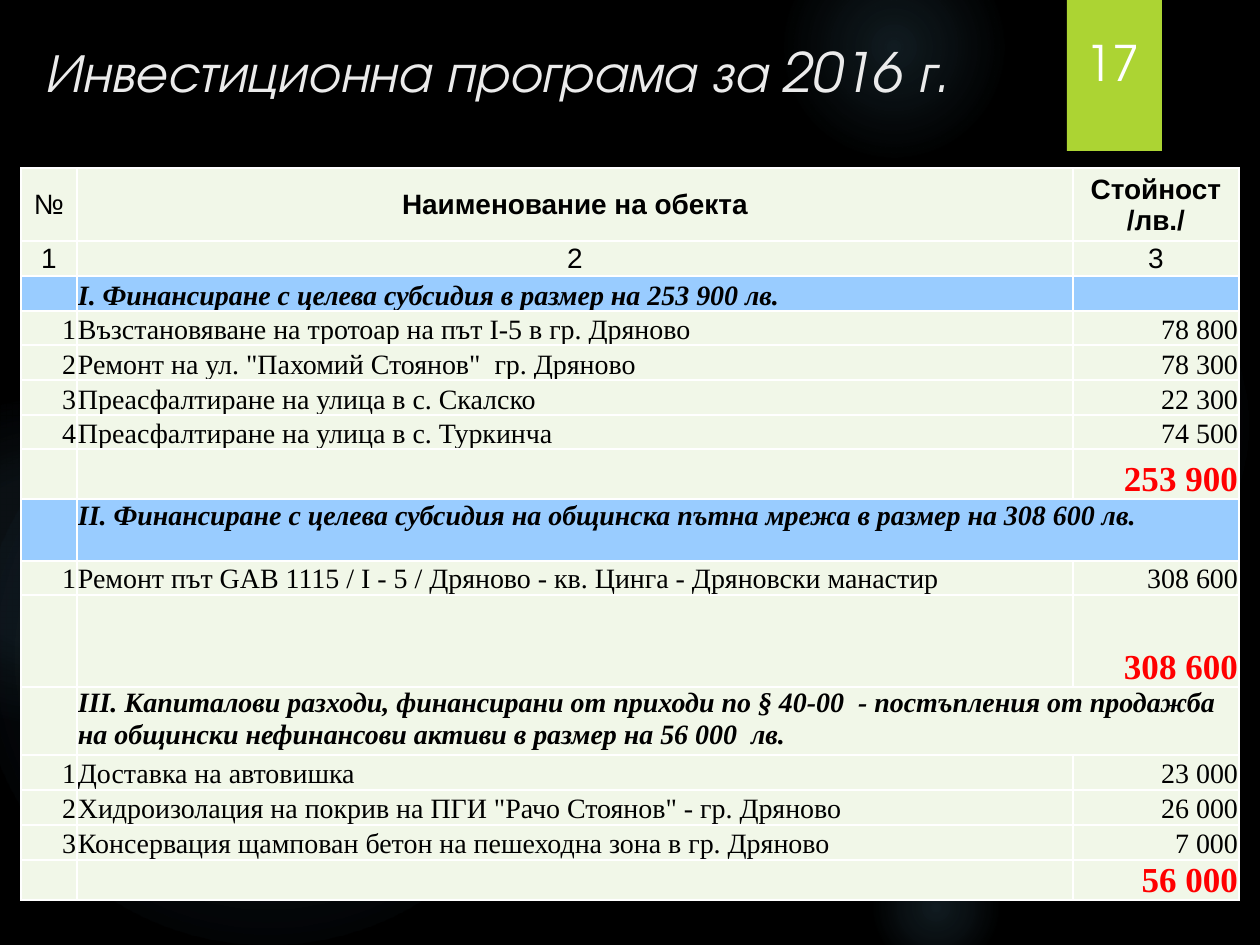
"""Build the 2016 investment programme slide with its table of funded projects."""
from dataclasses import dataclass

from lxml import etree
from pptx import Presentation
from pptx import util as u
from pptx.dml.color import RGBColor
from pptx.enum import shapes, text
from pptx.oxml import parse_xml
from pptx.oxml.ns import qn

PX_PER_INCH = 126
BLACK = RGBColor(0x00, 0x00, 0x00)
WHITE = RGBColor(0xFF, 0xFF, 0xFF)
TITLE_GRAY = RGBColor(0xEB, 0xEB, 0xEB)
LIME = RGBColor(0xAC, 0xD4, 0x33)
GLOW_BLUE = RGBColor(0x7A, 0xC4, 0xF0)
PALE_GREEN = RGBColor(0xF1, 0xF7, 0xE8)
SECTION_BLUE = RGBColor(0x99, 0xCC, 0xFF)
TOTAL_RED = RGBColor(0xFF, 0x00, 0x00)
DISPLAY, SANS, SERIF = "TeX Gyre Adventor", "Arial", "Times New Roman"
LEFT, CENTER, RIGHT = text.PP_ALIGN.LEFT, text.PP_ALIGN.CENTER, text.PP_ALIGN.RIGHT
TOP, MIDDLE, BOTTOM = text.MSO_ANCHOR.TOP, text.MSO_ANCHOR.MIDDLE, text.MSO_ANCHOR.BOTTOM
DRAWING_NS = "http://schemas.openxmlformats.org/drawingml/2006/main"


@dataclass(frozen=True)
class Glow:
    left: int
    top: int
    size: int
    stops: tuple[tuple[int, int], ...]


@dataclass(frozen=True)
class Style:
    font: str = SERIF
    size: int = 16
    color: RGBColor = BLACK
    bold: bool = False
    italic: bool = False
    align: text.PP_ALIGN = LEFT
    anchor: text.MSO_ANCHOR = BOTTOM


@dataclass(frozen=True)
class Row:
    height: int
    texts: tuple[str, str, str]
    styles: tuple[Style, Style, Style]
    fill: RGBColor = PALE_GREEN
    merged: bool = False


LABEL = Style(SANS, align=CENTER, anchor=MIDDLE)
HEADING = Style(SANS, bold=True, align=CENTER, anchor=MIDDLE)
NAME = Style()
NUMBER = Style(align=RIGHT)
TOTAL = Style(size=20, color=TOTAL_RED, bold=True, align=RIGHT)
SECTION = Style(bold=True, italic=True)
WIDE_SECTION = Style(bold=True, italic=True, anchor=TOP)
TITLE = Style(DISPLAY, 31, TITLE_GRAY, italic=True, anchor=TOP)
PAGE_NUMBER = Style(DISPLAY, 28, WHITE, align=CENTER)

GLOWS = (
    Glow(868, 231, 388, ((0, 7), (36, 6), (69, 0))),
    Glow(784, -63, 220, ((0, 14), (36, 7), (73, 0))),
    Glow(868, 840, 136, ((0, 14), (36, 7), (66, 0))),
    Glow(-21, 368, 577, ((0, 11), (36, 10), (75, 0))),
    Glow(-116, 399, 325, ((0, 8), (36, 8), (72, 0))),
)


def item(number: str, name: str, value: str, height: int = 35) -> Row:
    return Row(height, (number, name, value), (NUMBER, NAME, NUMBER))


def total(value: str, height: int) -> Row:
    return Row(height, ("", "", value), (NUMBER, NAME, TOTAL))


def section(name: str, height: int, style: Style, fill: RGBColor, merged: bool) -> Row:
    return Row(height, ("", name, ""), (NUMBER, style, NUMBER), fill, merged)


COLUMN_WIDTHS = (56, 996, 166)
ROWS = (
    Row(73, ("№", "Наименование на обекта", "Стойност /лв./"), (LABEL, HEADING, HEADING)),
    Row(35, ("1", "2", "3"), (LABEL, LABEL, LABEL)),
    section("І. Финансиране с целева субсидия в размер на 253 900 лв.",
            35, SECTION, SECTION_BLUE, False),
    item("1", "Възстановяване на тротоар на път I-5 в гр. Дряново", "78 800", 34),
    item("2", "Ремонт на ул. \"Пахомий Стоянов\"  гр. Дряново", "78 300"),
    item("3", "Преасфалтиране на улица в с. Скалско", "22 300"),
    item("4", "Преасфалтиране на улица в с. Туркинча", "74 500", 34),
    total("253 900", 50),
    section("ІI. Финансиране с целева субсидия на общинска пътна мрежа в размер на 308 600 лв.",
            62, WIDE_SECTION, SECTION_BLUE, True),
    item("1", "Ремонт път GAB 1115 / І - 5 / Дряново - кв. Цинга - Дряновски манастир",
         "308 600", 34),
    total("308 600", 92),
    section("ІІІ. Капиталови разходи, финансирани от приходи по § 40-00  - постъпления от "
            "продажба на общински нефинансови активи в размер на 56 000  лв.",
            68, WIDE_SECTION, PALE_GREEN, True),
    item("1", "Доставка на автовишка", "23 000"),
    item("2", "Хидроизолация на покрив на ПГИ \"Рачо Стоянов\" - гр. Дряново", "26 000"),
    item("3", "Консервация щампован бетон на пешеходна зона в гр. Дряново", "7 000"),
    total("56 000", 40),
)


def px(length: int) -> u.Emu:
    return u.Emu(round(length * 914400 / PX_PER_INCH))


def write(frame, content: str, style: Style) -> None:
    frame.text = content
    para = frame.paragraphs[0]
    para.alignment = style.align
    for span in para.runs:
        font = span.font
        font.name, font.size = style.font, u.Pt(style.size)
        font.bold, font.italic = style.bold, style.italic
        font.color.rgb = style.color
    if not content:
        etree.SubElement(para._p, qn("a:endParaRPr"), sz=str(style.size * 100))


def draw_glow(page, glow: Glow) -> None:
    circle = page.shapes.add_shape(shapes.MSO_SHAPE.OVAL, px(glow.left), px(glow.top),
                                   px(glow.size), px(glow.size))
    circle.shadow.inherit = False
    circle.line.fill.background()
    stops = "".join(
        f'<a:gs pos="{place * 1000}"><a:srgbClr val="{GLOW_BLUE}">'
        f'<a:alpha val="{alpha * 1000}"/></a:srgbClr></a:gs>' for place, alpha in glow.stops)
    gradient = parse_xml(
        f'<a:gradFill xmlns:a="{DRAWING_NS}"><a:gsLst>{stops}</a:gsLst><a:path path="circle">'
        '<a:fillToRect l="50000" t="50000" r="50000" b="50000"/></a:path></a:gradFill>')
    circle._element.spPr.find(qn("a:prstGeom")).addnext(gradient)


def draw_borders(cell) -> None:
    properties = cell._tc.get_or_add_tcPr()
    for index, side in enumerate(("lnL", "lnR", "lnT", "lnB")):
        properties.insert(index, parse_xml(
            f'<a:{side} xmlns:a="{DRAWING_NS}" w="12700"><a:solidFill>'
            f'<a:srgbClr val="{WHITE}"/></a:solidFill></a:{side}>'))


def draw_table(page) -> None:
    height = sum(row.height for row in ROWS)
    table = page.shapes.add_table(len(ROWS), len(COLUMN_WIDTHS), px(21), px(168),
                                  px(sum(COLUMN_WIDTHS)), px(height)).table
    table.first_row = table.horz_banding = False
    for column, width in zip(table.columns, COLUMN_WIDTHS):
        column.width = px(width)
    for row_index, row in enumerate(ROWS):
        table.rows[row_index].height = px(row.height)
        for column_index, (content, style) in enumerate(zip(row.texts, row.styles)):
            cell = table.cell(row_index, column_index)
            cell.margin_left = cell.margin_right = cell.margin_top = px(1)
            cell.margin_bottom = 0
            cell.vertical_anchor = style.anchor
            cell.fill.solid()
            cell.fill.fore_color.rgb = row.fill
            draw_borders(cell)
            write(cell.text_frame, content, style)
        if row.merged:
            table.cell(row_index, 1).merge(table.cell(row_index, 2))


def draw_heading(page) -> None:
    band = page.shapes.add_shape(shapes.MSO_SHAPE.RECTANGLE, px(1067), 0, px(95), px(151))
    band.shadow.inherit = False
    band.fill.solid()
    band.fill.fore_color.rgb = LIME
    band.line.fill.background()
    title = page.shapes.title
    title.left, title.top, title.width, title.height = px(32), px(32), px(1134), px(105)
    page.shapes._spTree.append(title._element)
    number = page.shapes.add_textbox(px(966), px(32), px(294), px(66))
    for box, content, style in (
            (title, "Инвестиционна програма за 2016 г.", TITLE), (number, "17", PAGE_NUMBER)):
        box.text_frame.word_wrap = True
        box.text_frame.auto_size = text.MSO_AUTO_SIZE.NONE
        box.text_frame.vertical_anchor = style.anchor
        write(box.text_frame, content, style)


def main() -> None:
    deck = Presentation()
    deck.slide_width, deck.slide_height = px(1260), px(945)
    page = deck.slides.add_slide(deck.slide_layouts[5])
    page.background.fill.solid()
    page.background.fill.fore_color.rgb = BLACK
    for glow in GLOWS:
        draw_glow(page, glow)
    draw_heading(page)
    draw_table(page)
    deck.save("out.pptx")


if __name__ == "__main__":
    main()
